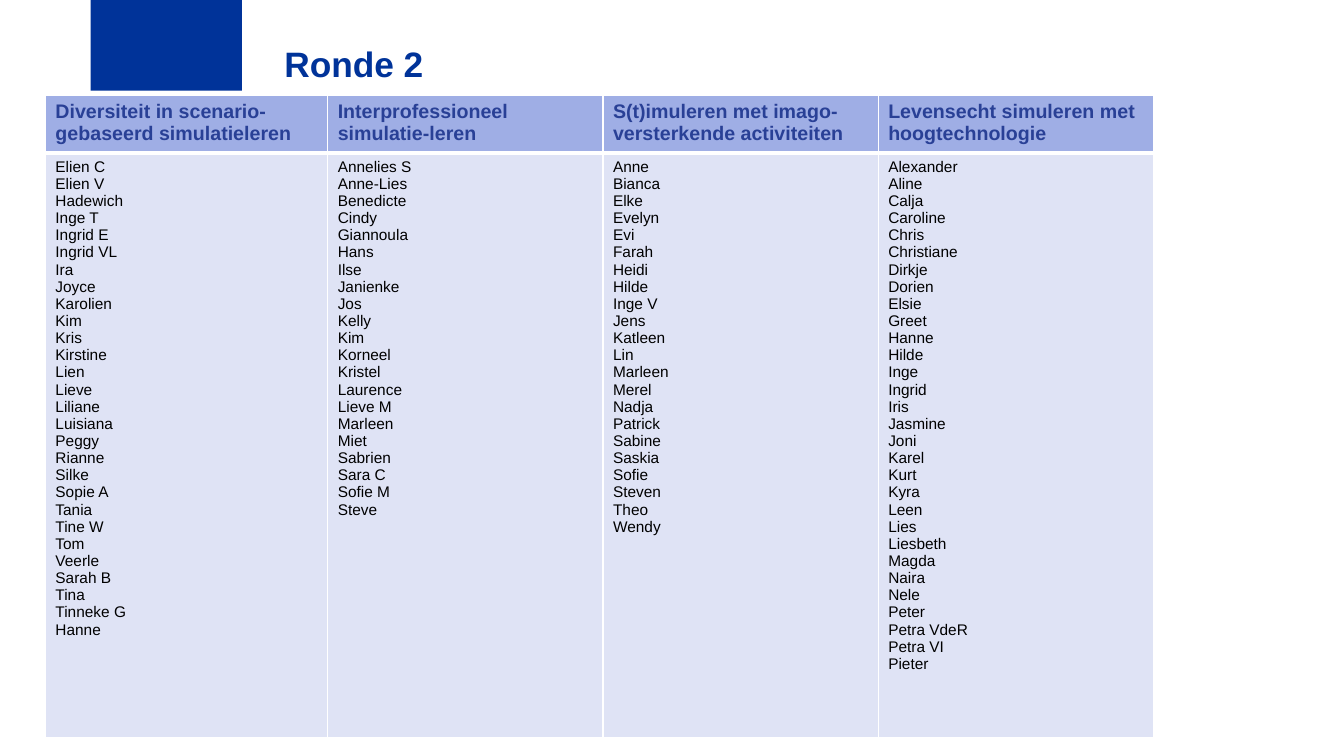
import lxml.etree
import pptx
import pptx.dml.color
import pptx.enum.shapes
import pptx.enum.text
import pptx.oxml.ns
import pptx.util

COLORS = {
    "brand": "003399",
    "header_text": "294096",
    "header_fill": "9FAEE5",
    "body_text": "000000",
    "body_fill": "DFE3F5",
    "border": "FFFFFF",
}
FONT = "Arial"
SESSIONS = {
    "Diversiteit in scenario-gebaseerd simulatieleren":
        "Elien C, Elien V, Hadewich, Inge T, Ingrid E, Ingrid VL, Ira, Joyce, Karolien, Kim, "
        "Kris, Kirstine, Lien, Lieve, Liliane, Luisiana, Peggy, Rianne, Silke, Sopie A, Tania, "
        "Tine W, Tom, Veerle, Sarah B, Tina, Tinneke G, Hanne",
    "Interprofessioneel simulatie-leren":
        "Annelies S, Anne-Lies, Benedicte, Cindy, Giannoula, Hans, Ilse, Janienke, Jos, Kelly, "
        "Kim, Korneel, Kristel, Laurence, Lieve M, Marleen, Miet, Sabrien, Sara C, Sofie M, Steve",
    "S(t)imuleren met imago-versterkende activiteiten":
        "Anne, Bianca, Elke, Evelyn, Evi, Farah, Heidi, Hilde, Inge V, Jens, Katleen, Lin, "
        "Marleen, Merel, Nadja, Patrick, Sabine, Saskia, Sofie, Steven, Theo, Wendy",
    "Levensecht simuleren met hoogtechnologie":
        "Alexander, Aline, Calja, Caroline, Chris, Christiane, Dirkje, Dorien, Elsie, Greet, "
        "Hanne, Hilde, Inge, Ingrid, Iris, Jasmine, Joni, Karel, Kurt, Kyra, Leen, Lies, "
        "Liesbeth, Magda, Naira, Nele, Peter, Petra VdeR, Petra VI, Pieter",
}
COLUMN_WIDTHS = [2.8, 2.73, 2.73, 2.73]
ROW_HEIGHTS = [0.57, 5.8]


def rgb(name):
    """Return the named colour."""
    return pptx.dml.color.RGBColor.from_string(COLORS[name])


def inches(box):
    """Convert a box given in inches to lengths."""
    return [pptx.util.Inches(v) for v in box]


def format_text(tf, size, color, bold):
    """Format every run of a text frame."""
    for p in tf.paragraphs:
        for r in p.runs:
            r.font.name = FONT
            r.font.size = pptx.util.Pt(size)
            r.font.bold = bold
            r.font.color.rgb = rgb(color)


def set_borders(cell, widths):
    """Draw the cell borders with the given widths in points."""
    tc_pr = cell._tc.get_or_add_tcPr()
    for side, width in widths.items():
        ln = lxml.etree.SubElement(tc_pr, pptx.oxml.ns.qn(f"a:ln{side}"), w=str(pptx.util.Pt(width)))
        fill = lxml.etree.SubElement(ln, pptx.oxml.ns.qn("a:solidFill"))
        lxml.etree.SubElement(fill, pptx.oxml.ns.qn("a:srgbClr"), val=COLORS["border"])


def add_brand_block(s, box):
    """Add the solid block at the top edge."""
    sp = s.shapes.add_shape(pptx.enum.shapes.MSO_SHAPE.RECTANGLE, *inches(box))
    sp.shadow.inherit = False
    sp.fill.solid()
    sp.fill.fore_color.rgb = rgb("brand")
    sp.line.fill.background()


def add_title(s, box, text):
    """Add the slide title."""
    tf = s.shapes.add_textbox(*inches(box)).text_frame
    tf.word_wrap = True
    tf.margin_left = tf.margin_top = tf.margin_right = tf.margin_bottom = 0
    tf.vertical_anchor = pptx.enum.text.MSO_ANCHOR.MIDDLE
    tf.text = text
    tf.paragraphs[0].line_spacing = 0.9
    format_text(tf, 25.2, "brand", True)


def fill_cell(cell, text, part, size, bold, borders):
    """Write and style one cell as header or body."""
    set_borders(cell, borders)
    cell.fill.solid()
    cell.fill.fore_color.rgb = rgb(f"{part}_fill")
    cell.text_frame.text = text
    format_text(cell.text_frame, size, f"{part}_text", bold)


def add_sessions(s, left, top):
    """Add the table with one column of participants per session."""
    box = (left, top, sum(COLUMN_WIDTHS), sum(ROW_HEIGHTS))
    table = s.shapes.add_table(len(ROW_HEIGHTS), len(SESSIONS), *inches(box)).table
    table.horz_banding = False
    for row, height in zip(table.rows, ROW_HEIGHTS):
        row.height = pptx.util.Inches(height)
    for i, (session, names) in enumerate(SESSIONS.items()):
        table.columns[i].width = pptx.util.Inches(COLUMN_WIDTHS[i])
        fill_cell(table.cell(0, i), session, "header", 14, True, {"L": 1, "R": 1, "T": 1, "B": 3})
        fill_cell(table.cell(1, i), names.replace(", ", "\n"), "body", 11, False,
                  {"L": 1, "R": 1, "T": 3, "B": 1})


def main():
    """Build and save the presentation."""
    prs = pptx.Presentation()
    prs.slide_width, prs.slide_height = inches((13.33, 7.5))
    s = prs.slides.add_slide(prs.slide_layouts[6])
    add_brand_block(s, (0.9, 0, 1.5, 0.9))
    add_title(s, (2.82, 0.47, 5.74, 0.38), "Ronde 2")
    add_sessions(s, 0.45, 0.95)
    prs.save("out.pptx")


if __name__ == "__main__":
    main()
